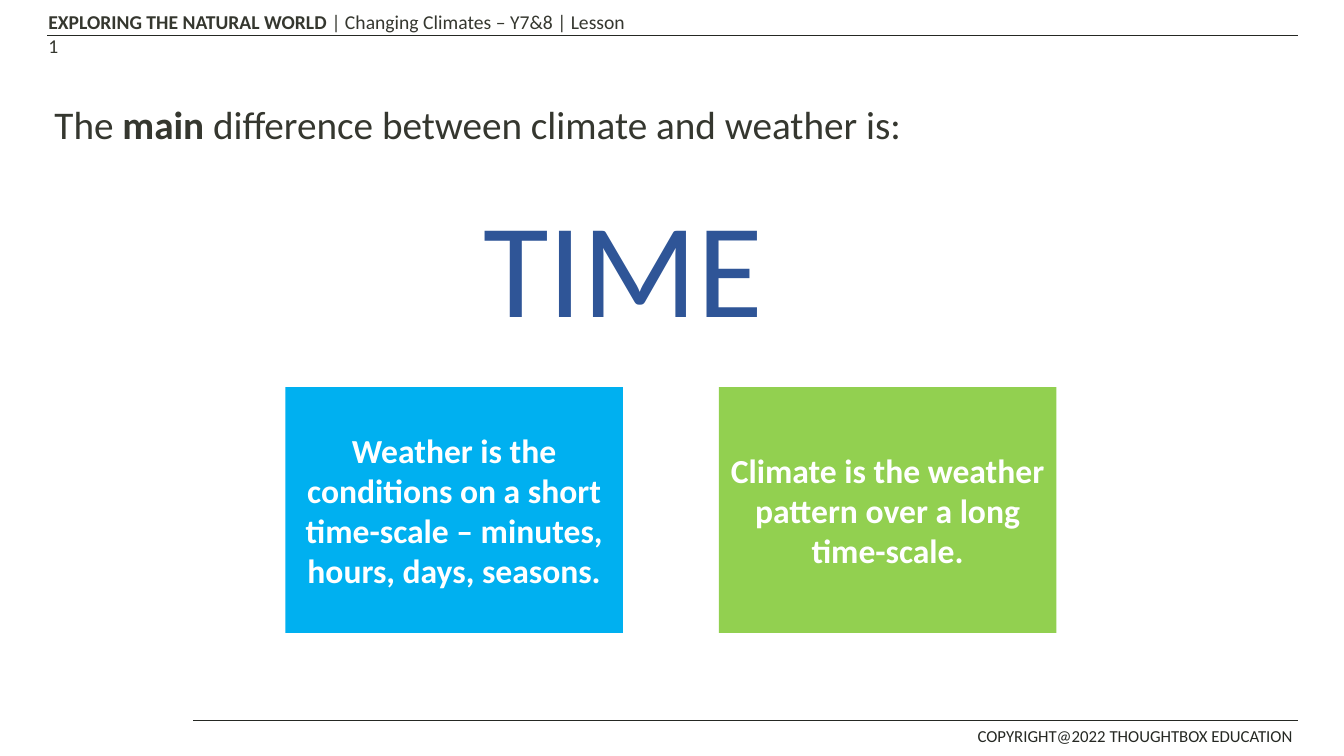
from collections import namedtuple

from lxml.etree import SubElement
from pptx import Presentation
from pptx.dml.color import RGBColor
from pptx.enum.shapes import MSO_CONNECTOR, MSO_SHAPE
from pptx.enum.text import MSO_ANCHOR, MSO_AUTO_SIZE, PP_ALIGN
from pptx.oxml.ns import qn
from pptx.util import Pt

Box = namedtuple("Box", "left top width height")

FONT = "Calibri"
COLOURS = {
    "rule": "252823",
    "text": "35372F",
    "keyword": "2F5597",
    "weather": "00B0F0",
    "climate": "92D050",
    "white": "FFFFFF",
}
CARDS = [
    ("weather", "Weather is the conditions on a short time-scale – minutes, hours, days, seasons."),
    ("climate", "Climate is the weather pattern over a long time-scale."),
]


def colour(name):
    return RGBColor.from_string(COLOURS[name])


def write(frame, *parts, size, ink="text", bold=False, align=PP_ALIGN.LEFT,
          anchor=MSO_ANCHOR.TOP, spacing=1.0):
    """Fill the frame with one paragraph; every second part swaps the weight."""
    frame.word_wrap = True
    frame.auto_size = MSO_AUTO_SIZE.NONE
    frame.vertical_anchor = anchor
    para = frame.paragraphs[0]
    para.alignment = align
    para.line_spacing = spacing
    for index, part in enumerate(parts):
        span = para.add_run()
        span.text = part
        span.font.name = FONT
        span.font.size = Pt(size)
        span.font.bold = bold != bool(index % 2)
        span.font.color.rgb = colour(ink)


def add_text(page, box, *parts, **text_format):
    label = page.shapes.add_textbox(*map(Pt, box))
    write(label.text_frame, *parts, **text_format)


def add_rule(page, left, right, y):
    rule = page.shapes.add_connector(
        MSO_CONNECTOR.STRAIGHT, Pt(left), Pt(y), Pt(right), Pt(y))
    rule.line.color.rgb = colour("rule")
    rule.line.width = Pt(1)
    SubElement(rule._element.spPr, qn("a:effectLst"))


def add_header(page, box):
    add_rule(page, box.left, box.left + box.width, box.top + 21.6)
    add_text(page, Box(box.left - 6.5, box.top, 430.5, box.height),
             "EXPLORING THE NATURAL WORLD ", "| Changing Climates – Y7&8 | Lesson 1",
             size=14, bold=True)


def add_footer(page, box):
    right = box.left + box.width
    add_rule(page, box.left, right, box.top)
    add_text(page, Box(right - 236.2, box.top, 244.8, box.height),
             "COPYRIGHT@2022 THOUGHTBOX EDUCATION", size=12, ink="rule")


def add_heading(page, box):
    title = page.shapes.title
    title.left, title.top, title.width, title.height = map(Pt, box)
    write(title.text_frame, "The", " main ", "difference between climate and weather is:",
          size=28, spacing=0.9)


def add_cards(page, box, gap):
    width = (box.width - gap * (len(CARDS) - 1)) / len(CARDS)
    for index, (fill, text) in enumerate(CARDS):
        card_box = Box(box.left + index * (width + gap), box.top, width, box.height)
        card = page.shapes.add_shape(MSO_SHAPE.RECTANGLE, *map(Pt, card_box))
        card.shadow.inherit = False
        card.fill.solid()
        card.fill.fore_color.rgb = colour(fill)
        card.line.fill.background()
        write(card.text_frame, text, size=24, ink="white", bold=True,
              align=PP_ALIGN.CENTER, anchor=MSO_ANCHOR.MIDDLE)


def add_difference_slide(deck):
    page = deck.slides.add_slide(deck.slide_layouts[5])
    add_header(page, Box(33.9, 3.6, 893.5, 24.5))
    add_footer(page, Box(138.2, 514.8, 789.2, 22.3))
    add_heading(page, Box(31.7, 72, 892.8, 55.4))
    add_cards(page, Box(203.8, 276.5, 550.8, 175.7), gap=68.4)
    add_text(page, Box(205.2, 127.4, 480.2, 123.8), "TIME",
             size=96, ink="keyword", align=PP_ALIGN.CENTER)


def main():
    deck = Presentation()
    deck.slide_width, deck.slide_height = Pt(960), Pt(540)
    add_difference_slide(deck)
    deck.save("out.pptx")


if __name__ == "__main__":
    main()
